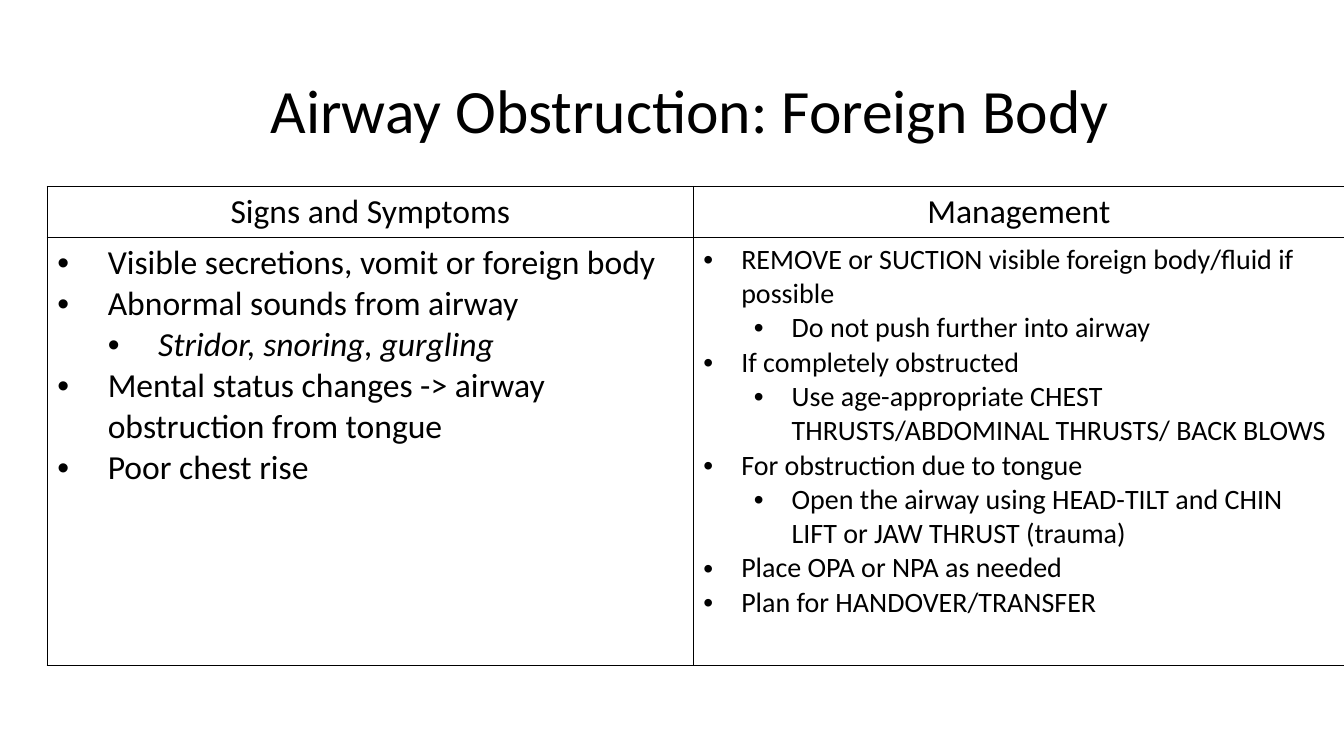
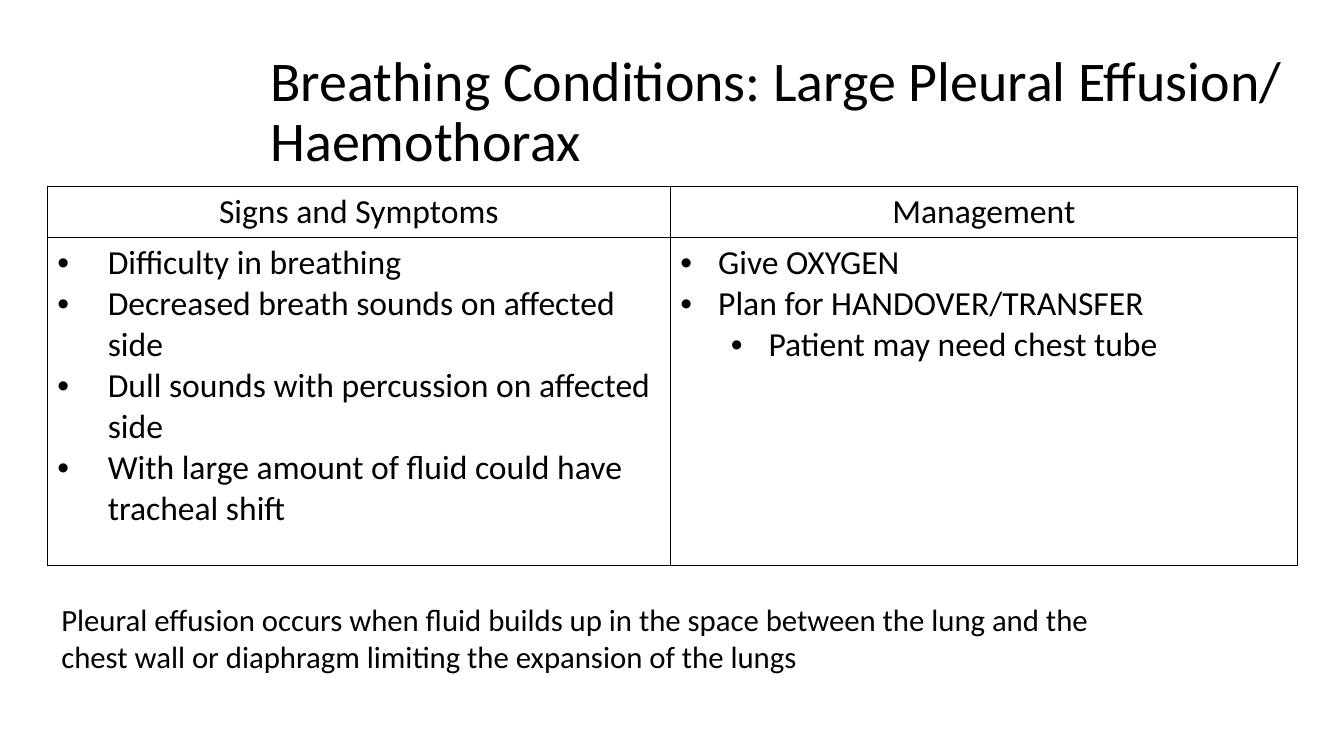
from dataclasses import dataclass

from lxml.etree import SubElement
from pptx import Presentation
from pptx.dml.color import RGBColor
from pptx.enum.text import MSO_ANCHOR, MSO_AUTO_SIZE, PP_ALIGN
from pptx.oxml import parse_xml
from pptx.oxml.ns import nsdecls, qn
from pptx.util import Pt

HEADERS = ("Signs and Symptoms", "Management")

SLIDES = [
    {
        "title": "Airway Obstruction: Foreign Body",
        "title_size": 44,
        "title_width": 708,
        "col_widths": (461.5, 465),
        "body_height": 305.5,
        "body_sizes": (24, 20),
        "columns": (
            [
                (0, "Visible secretions, vomit or foreign body"),
                (0, "Abnormal sounds from airway"),
                (1, "Stridor, snoring, gurgling", True),
                (0, "Mental status changes -> airway obstruction from tongue"),
                (0, "Poor chest rise"),
            ],
            [
                (0, "REMOVE or SUCTION visible foreign body/fluid if possible"),
                (1, "Do not push further into airway"),
                (0, "If completely obstructed"),
                (1, "Use age-appropriate CHEST THRUSTS/ABDOMINAL THRUSTS/ BACK BLOWS"),
                (0, "For obstruction due to tongue"),
                (1, "Open the airway using HEAD-TILT and CHIN LIFT or JAW THRUST (trauma)"),
                (0, "Place OPA or NPA as needed"),
                (0, "Plan for HANDOVER/TRANSFER"),
            ],
        ),
    },
    {
        "title": "Breathing Conditions: Large Pleural Effusion/ Haemothorax",
        "title_size": 40,
        "title_width": 740,
        "col_widths": (445, 448),
        "body_height": 234,
        "body_sizes": (24, 24),
        "columns": (
            [
                (0, "Difficulty in breathing"),
                (0, "Decreased breath sounds on affected side"),
                (0, "Dull sounds with percussion on affected side"),
                (0, "With large amount of fluid could have tracheal shift"),
            ],
            [
                (0, "Give OXYGEN"),
                (0, "Plan for HANDOVER/TRANSFER"),
                (1, "Patient may need chest tube"),
            ],
        ),
        "note": "Pleural effusion occurs when fluid builds up in the space between "
                "the lung and the chest wall or diaphragm limiting the expansion of the lungs",
    },
]


@dataclass(frozen=True)
class Theme:
    """Shared colours, type sizes and measures in points."""
    ink: str = "000000"
    font: str = "Calibri"
    header_size: int = 24
    note_size: int = 22
    border: float = 1
    title_left: float = 186
    title_top: float = 28.8
    title_height: float = 104.4
    table_left: float = 33.8
    table_top: float = 133.2
    header_height: float = 36.5
    hangs: tuple = (36, 27)
    level_step: float = 36
    note_box: tuple = (36.7, 425.5, 788.4, 60.5)


THEME = Theme()


def set_format(target, values):
    """Set each named attribute on the target."""
    for name, value in values.items():
        setattr(target, name, value)


def write(p, text, size, italic=False):
    """Add one formatted run to a paragraph."""
    r = p.add_run()
    r.text = text
    set_format(r.font, {"name": THEME.font, "size": Pt(size), "bold": False, "italic": italic})
    r.font.color.rgb = RGBColor.from_string(THEME.ink)


def add_bullet(p, level, hang):
    """Give a paragraph a hanging bullet at its level."""
    p.level = level
    pPr = p._p.get_or_add_pPr()
    pPr.set("marL", str(Pt(hang + level * THEME.level_step)))
    pPr.set("indent", str(-Pt(hang)))
    SubElement(pPr, qn("a:buFont")).set("typeface", "Arial")
    SubElement(pPr, qn("a:buChar")).set("char", "•")


def style_cell(cell):
    """Clear the cell fill and draw its four borders."""
    cell.fill.background()
    tcPr = cell._tc.get_or_add_tcPr()
    for i, side in enumerate("LRTB"):
        tcPr.insert(i, parse_xml(
            f'<a:ln{side} {nsdecls("a")} w="{Pt(THEME.border)}"><a:solidFill>'
            f'<a:srgbClr val="{THEME.ink}"/></a:solidFill></a:ln{side}>'))


def add_title(s, data):
    """Place and format the title placeholder."""
    sp = s.shapes.title
    set_format(sp, {"left": Pt(THEME.title_left), "top": Pt(THEME.title_top),
                    "width": Pt(data["title_width"]), "height": Pt(THEME.title_height)})
    tf = sp.text_frame
    set_format(tf, {"word_wrap": True, "auto_size": MSO_AUTO_SIZE.NONE,
                    "vertical_anchor": MSO_ANCHOR.MIDDLE})
    p = tf.paragraphs[0]
    set_format(p, {"alignment": PP_ALIGN.LEFT, "line_spacing": 0.9})
    write(p, data["title"], data["title_size"])


def add_care_table(s, data):
    """Add the table of signs and management."""
    heights = (THEME.header_height, data["body_height"])
    table = s.shapes.add_table(
        2, len(HEADERS), Pt(THEME.table_left), Pt(THEME.table_top),
        Pt(sum(data["col_widths"])), Pt(sum(heights))).table
    set_format(table, {"first_row": False, "horz_banding": False})
    for row, height in zip(table.rows, heights):
        row.height = Pt(height)
    for col, width in zip(table.columns, data["col_widths"]):
        col.width = Pt(width)
    for cell in table.iter_cells():
        style_cell(cell)
    for i, header in enumerate(HEADERS):
        p = table.cell(0, i).text_frame.paragraphs[0]
        p.alignment = PP_ALIGN.CENTER
        write(p, header, THEME.header_size)
        tf = table.cell(1, i).text_frame
        for n, (level, *content) in enumerate(data["columns"][i]):
            p = tf.add_paragraph() if n else tf.paragraphs[0]
            add_bullet(p, level, THEME.hangs[i])
            write(p, content[0], data["body_sizes"][i], italic=len(content) > 1)


def add_note(s, text):
    """Add the explanatory text under the table."""
    tf = s.shapes.add_textbox(*map(Pt, THEME.note_box)).text_frame
    set_format(tf, {"word_wrap": True, "auto_size": MSO_AUTO_SIZE.SHAPE_TO_FIT_TEXT})
    write(tf.paragraphs[0], text, THEME.note_size)


def main():
    """Build and save the presentation."""
    prs = Presentation()
    set_format(prs, {"slide_width": Pt(960), "slide_height": Pt(540)})
    layout = prs.slide_layouts.get_by_name("Title Only")
    for data in SLIDES:
        s = prs.slides.add_slide(layout)
        add_title(s, data)
        add_care_table(s, data)
        if "note" in data:
            add_note(s, data["note"])
    prs.save("out.pptx")


if __name__ == "__main__":
    main()
